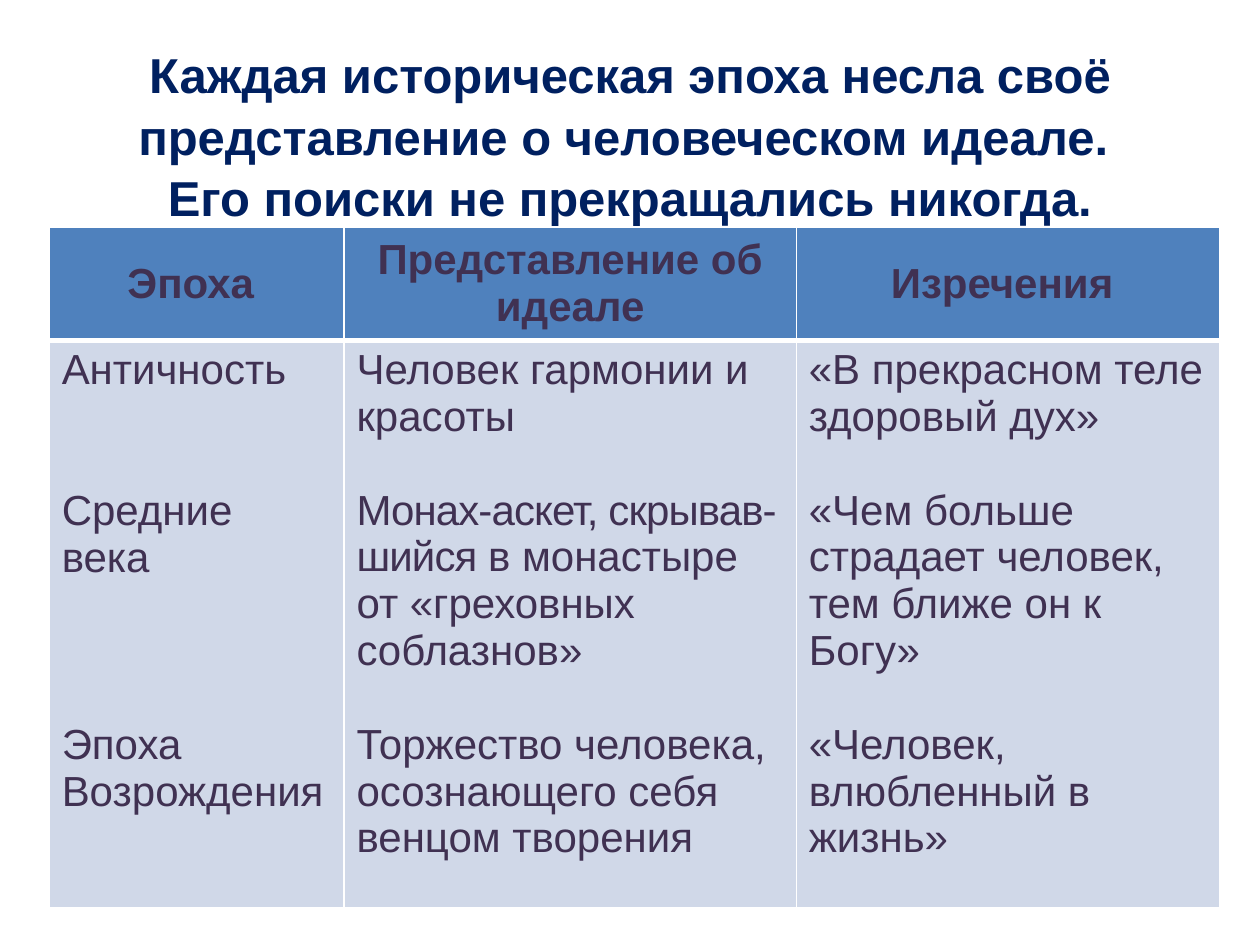
from lxml import etree
from pptx import Presentation
from pptx.dml.color import RGBColor
from pptx.enum import text
from pptx.oxml import ns
from pptx.util import Inches, Pt

COLORS = {"title": "002060", "body": "403152", "header": "4F81BD",
          "row": "D0D8E8", "border": "FFFFFF"}
FONT = "Arial"
LINE = 26.8

TITLE = ["Каждая историческая эпоха несла своё представление о человеческом идеале. ",
         "Его поиски не прекращались никогда."]
HEADERS = ["Эпоха ", "Представление об идеале", "Изречения "]
TIGHT = "Монах-аскет, скрывав-шийся "
EPOCHS = [(0, "Античность"), (2, "Средние века"), (3, "Эпоха Возрождения")]
IDEALS = [(0, "Человек гармонии и красоты"),
          (1, TIGHT + "в монастыре от «греховных соблазнов»"),
          (1, "Торжество человека, осознающего себя венцом творения")]
SAYINGS = [(0, "«В прекрасном теле здоровый дух»"),
           (1, "«Чем больше страдает человек, тем ближе он к Богу»"),
           (1, "«Человек, влюбленный в жизнь»")]


def style(run, size, color, bold):
    """Set the font, size, colour and weight of a run."""
    run.font.name = FONT
    run.font.size = Pt(size)
    run.font.bold = bold
    run.font.color.rgb = RGBColor.from_string(COLORS[color])


def border(cell, bottom):
    """Draw white cell borders, with the given bottom width in points."""
    properties = cell._tc.get_or_add_tcPr()
    widths = {"lnL": 1, "lnR": 1, "lnT": 1, "lnB": bottom}
    for position, (side, width) in enumerate(widths.items()):
        line = etree.Element(ns.qn(f"a:{side}"), w=str(Pt(width)))
        fill = etree.SubElement(line, ns.qn("a:solidFill"))
        etree.SubElement(fill, ns.qn("a:srgbClr"), val=COLORS["border"])
        properties.insert(position, line)


def fill_cell(cell, color, bottom):
    """Give a cell its fill and borders."""
    cell.fill.solid()
    cell.fill.fore_color.rgb = RGBColor.from_string(COLORS[color])
    border(cell, bottom)


def add_title(slide, left, top, width, height):
    """Place the centred heading."""
    frame = slide.shapes.add_textbox(left, top, width, height).text_frame
    frame.word_wrap = True
    frame.auto_size = text.MSO_AUTO_SIZE.SHAPE_TO_FIT_TEXT
    frame.text = "\n".join(TITLE)
    for paragraph in frame.paragraphs:
        paragraph.alignment = text.PP_ALIGN.CENTER
        paragraph.line_spacing = 1.05
        style(paragraph.runs[0], 28, "title", True)


def add_header(cell, heading):
    """Write a column heading."""
    fill_cell(cell, "header", 3)
    cell.vertical_anchor = text.MSO_ANCHOR.MIDDLE
    cell.text_frame.text = heading
    paragraph = cell.text_frame.paragraphs[0]
    paragraph.alignment = text.PP_ALIGN.CENTER
    style(paragraph.runs[0], 24, "body", True)


def add_entries(cell, entries):
    """Write the entries of a column, each after a gap of whole lines."""
    fill_cell(cell, "row", 1)
    frame = cell.text_frame
    frame.text = "\n".join(entry for _, entry in entries)
    for paragraph, (gap, entry) in zip(frame.paragraphs, entries):
        if gap:
            paragraph.space_before = Pt(gap * LINE)
        if entry.startswith(TIGHT):
            paragraph.text = TIGHT
            paragraph.runs[0].font._element.set("spc", "-50")
            paragraph.add_run().text = entry[len(TIGHT):]
        for run in paragraph.runs:
            style(run, 24, "body", False)


def add_epochs(slide, left, top, width, height):
    """Place the table of epochs, ideals and sayings."""
    table = slide.shapes.add_table(2, 3, left, top, width, height).table
    for column, size in zip(table.columns, (2.34, 3.59, 3.36)):
        column.width = Inches(size)
    for row, size in zip(table.rows, (0.9, 4.5)):
        row.height = Inches(size)
    for index, entries in enumerate((EPOCHS, IDEALS, SAYINGS)):
        add_header(table.cell(0, index), HEADERS[index])
        add_entries(table.cell(1, index), entries)


def main():
    """Build the slide and save it."""
    deck = Presentation()
    deck.slide_width, deck.slide_height = Inches(10), Inches(7.5)
    slide = deck.slides.add_slide(deck.slide_layouts[6])
    add_title(slide, Inches(0), Inches(0.28), Inches(10), Inches(1.51))
    add_epochs(slide, Inches(0.39), Inches(1.8), Inches(9.29), Inches(5.4))
    deck.save("out.pptx")


if __name__ == "__main__":
    main()
